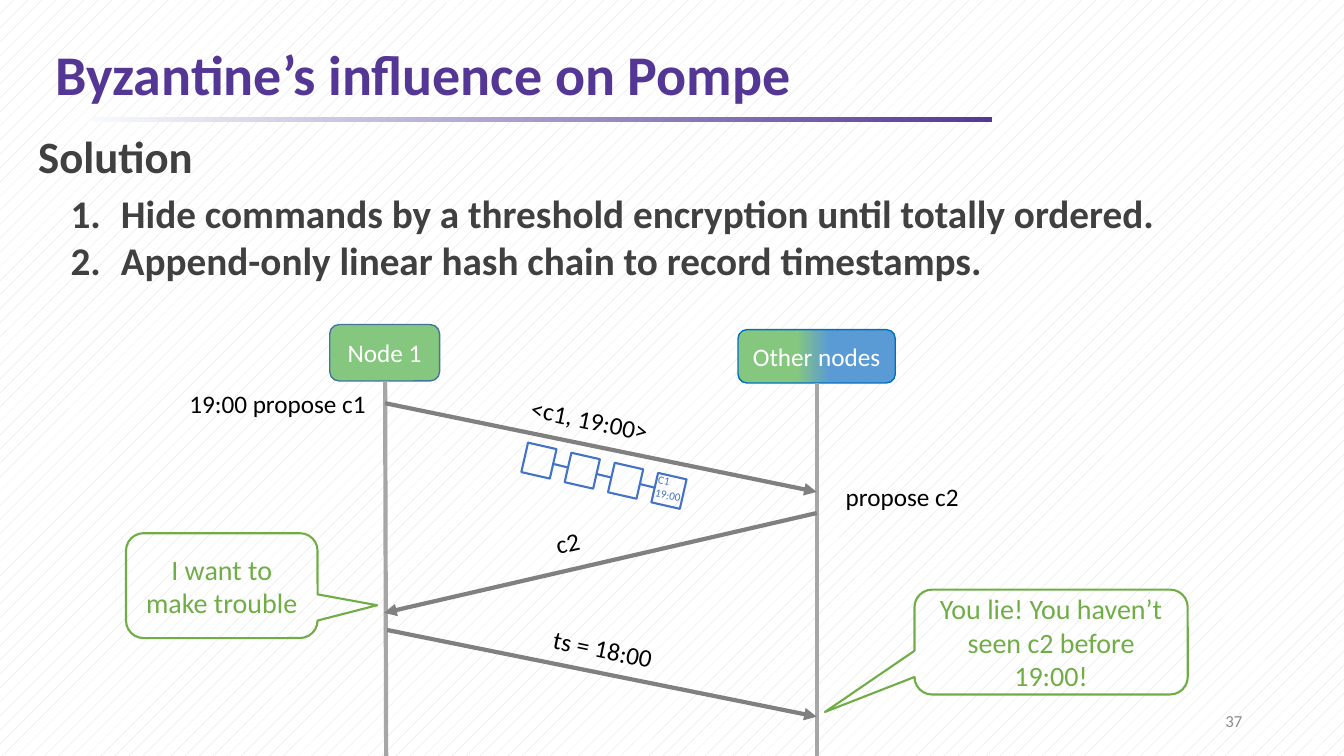
from math import cos, radians, sin

from lxml import etree
from pptx import Presentation
from pptx.dml.color import RGBColor
from pptx.enum.dml import MSO_PATTERN
from pptx.enum.shapes import MSO_CONNECTOR, MSO_SHAPE
from pptx.enum.text import MSO_ANCHOR, MSO_AUTO_SIZE, PP_ALIGN
from pptx.oxml.ns import qn
from pptx.util import Inches, Pt

RECT = MSO_SHAPE.RECTANGLE
ROUND = MSO_SHAPE.ROUNDED_RECTANGLE
BUBBLE = MSO_SHAPE.ROUNDED_RECTANGULAR_CALLOUT
STRAIGHT = MSO_CONNECTOR.STRAIGHT
LEFT, CENTER, RIGHT = PP_ALIGN.LEFT, PP_ALIGN.CENTER, PP_ALIGN.RIGHT
TOP, MIDDLE = MSO_ANCHOR.TOP, MSO_ANCHOR.MIDDLE
FIXED, GROW = MSO_AUTO_SIZE.NONE, MSO_AUTO_SIZE.SHAPE_TO_FIT_TEXT
DOTS = MSO_PATTERN.PERCENT_5

FONT = "Calibri"
PURPLE, DARK, BLACK, WHITE = "543795", "404040", "000000", "FFFFFF"
GREEN, BLUE, LIME = "86C77F", "4472C4", "70AD47"
GRAY, SILVER = "808080", "A6A6A6"
BOTTOM_SIDE, LEFT_SIDE, RIGHT_SIDE = 2, 1, 3


def rgb(color):
    return RGBColor.from_string(color)


def place(shape, box):
    shape.left, shape.top, shape.width, shape.height = map(Inches, box)


def write(shape, text, size, color, bold=False, align=LEFT, anchor=MIDDLE,
          fit=FIXED, spacing=1):
    frame = shape.text_frame
    frame.text = text
    frame.word_wrap = True
    frame.auto_size = fit
    frame.vertical_anchor = anchor
    for para in frame.paragraphs:
        para.alignment = align
        para.line_spacing = spacing
        para.space_before = Pt(0)
        for run in para.runs:
            font = run.font
            font.name, font.size, font.bold = FONT, Pt(size), bold
            font.color.rgb = rgb(color)


def number(para):
    props = para._p.get_or_add_pPr()
    props.set("marL", str(Inches(0.5)))
    props.set("indent", str(Inches(-0.5)))
    etree.SubElement(props, qn("a:buFont"), typeface="+mj-lt")
    etree.SubElement(props, qn("a:buAutoNum"), type="arabicPeriod")


def label(slide, text, box, size=18, color=BLACK, turn=0, **style):
    shape = slide.shapes.add_textbox(*map(Inches, box))
    shape.rotation = turn
    write(shape, text, size, color, **style)


def blend(fill, stops, angle=0):
    """Fill with a gradient of two (position, colour) stops."""
    fill.gradient()
    fill.gradient_angle = angle
    for stop, (pos, color) in zip(fill.gradient_stops, stops):
        stop.position = pos
        stop.color.rgb = rgb(color)


def block(slide, kind, box, edge=None, width=1.0, fill=None, turn=0):
    shape = slide.shapes.add_shape(kind, *map(Inches, box))
    shape.shadow.inherit = False
    shape.rotation = turn
    if fill:
        shape.fill.solid()
        shape.fill.fore_color.rgb = rgb(fill)
    else:
        shape.fill.background()
    if edge:
        shape.line.color.rgb = rgb(edge)
        shape.line.width = Pt(width)
    else:
        shape.line.fill.background()
    return shape


def link(slide, start, end, color, width=3.0, arrow=False, first=None, last=None):
    """Draw a line; first and last are (shape, side) pairs to join."""
    line = slide.shapes.add_connector(STRAIGHT, *map(Inches, start + end))
    line.line.color.rgb = rgb(color)
    line.line.width = Pt(width)
    if arrow:
        etree.SubElement(line.line._get_or_add_ln(), qn("a:tailEnd"), type="triangle")
    etree.SubElement(line._element.spPr, qn("a:effectLst"))
    if first:
        line.begin_connect(*first)
    if last:
        line.end_connect(*last)
    # Joining ignores rotation, so the ends are set again.
    line.begin_x, line.begin_y = map(Inches, start)
    line.end_x, line.end_y = map(Inches, end)


def bubble(slide, text, box, tip):
    shape = block(slide, BUBBLE, box, LIME, 1.5)
    for i, value in enumerate(tip + (0.167,)):
        shape.adjustments[i] = value
    write(shape, text, 20, LIME, align=CENTER)


def chain(slide):
    """Draw four tilted blocks joined by short links."""
    wide, high, turn = 0.29, 0.3, 12.8
    dx = wide / 2 * cos(radians(turn))
    dy = wide / 2 * sin(radians(turn))
    prev = None
    for i in range(4):
        left, top = 5.2 + 0.43 * i, 4.42 + 0.1 * i
        x, y = left + wide / 2, top + high / 2
        item = block(slide, RECT, (left, top, wide, high), BLUE, 1.5, turn=turn)
        if prev:
            link(slide, out, (x - dx, y - dy), BLUE, 1.5,
                 first=(prev, RIGHT_SIDE), last=(item, LEFT_SIDE))
        prev, out = item, (x + dx, y + dy)
    label(slide, "C1\n19:00", (6.4, 4.7, 0.79, 0.46), 8, BLUE, 12.6,
          anchor=TOP, fit=GROW)


def heading(slide):
    bar = block(slide, RECT, (0.92, 1.16, 8.92, 0.05))
    blend(bar.fill, [(0, "F7FAFD"), (1, PURPLE)])
    title, body = slide.placeholders
    place(title, (0.45, 0.39, 11.5, 0.75))
    write(title, "Byzantine’s influence on Pompe", 40, PURPLE, True, spacing=0.9)
    label(slide, "Solution", (0.28, 1.2, 11.5, 0.75), 32, DARK, bold=True, spacing=0.9)
    place(body, (0.6, 1.83, 12.34, 1.04))
    write(body, "Hide commands by a threshold encryption until totally ordered.\n"
          "Append-only linear hash chain to record timestamps.", 28, DARK, True, anchor=TOP)
    for para in body.text_frame.paragraphs:
        number(para)
    label(slide, "37", (9.42, 6.95, 3, 0.4), 12, "8C8C8C", align=RIGHT)


def nodes(slide):
    one = block(slide, ROUND, (3.27, 3.22, 1.09, 0.56), "43739E", fill=GREEN)
    write(one, "Node 1", 18, WHITE, align=CENTER)
    link(slide, (3.82, 3.78), (3.83, 7.5), SILVER, first=(one, BOTTOM_SIDE))
    other = block(slide, ROUND, (7.32, 3.27, 1.56, 0.53), "0070C0")
    blend(other.fill, [(0.42, "5B9BD5"), (0.63, GREEN)], 180)
    write(other, "Other nodes", 18, WHITE, align=CENTER)
    link(slide, (8.1, 3.8), (8.1, 7.5), SILVER, first=(other, BOTTOM_SIDE))


def messages(slide):
    for start, end in [((3.82, 4), (8.1, 4.88)),
                       ((8.1, 5.09), (3.81, 6.08)),
                       ((3.84, 6.25), (8.1, 7.11))]:
        link(slide, start, end, GRAY, arrow=True)
    for text, left, top, width, turn in [
            ("19:00 propose c1", 1.78, 3.8, 2.27, 0),
            ("<c1, 19:00>", 5.16, 4, 1.73, 11.7),
            ("propose c2", 8.29, 4.73, 2.27, 0),
            ("c2", 5.4, 5.04, 1.73, 347.7),
            ("ts = 18:00", 5.38, 6.29, 1.73, 11.7)]:
        label(slide, text, (left, top, width, 0.4), turn=turn, anchor=TOP, fit=GROW)


def main():
    deck = Presentation()
    deck.slide_width, deck.slide_height = Inches(13.33), Inches(7.5)
    slide = deck.slides.add_slide(deck.slide_layouts[1])
    fill = slide.background.fill
    fill.patterned()
    fill.pattern = DOTS
    fill.fore_color.rgb = rgb("D9D9D9")
    fill.back_color.rgb = rgb(WHITE)
    heading(slide)
    nodes(slide)
    messages(slide)
    chain(slide)
    bubble(slide, "I want to make trouble", (1.25, 5.29, 1.9, 1.04), (0.811, 0.187))
    bubble(slide, "You lie! You haven’t seen c2 before 19:00!",
           (9.07, 5.85, 2.71, 1.04), (-0.828, 0.667))
    deck.save("out.pptx")


if __name__ == "__main__":
    main()
